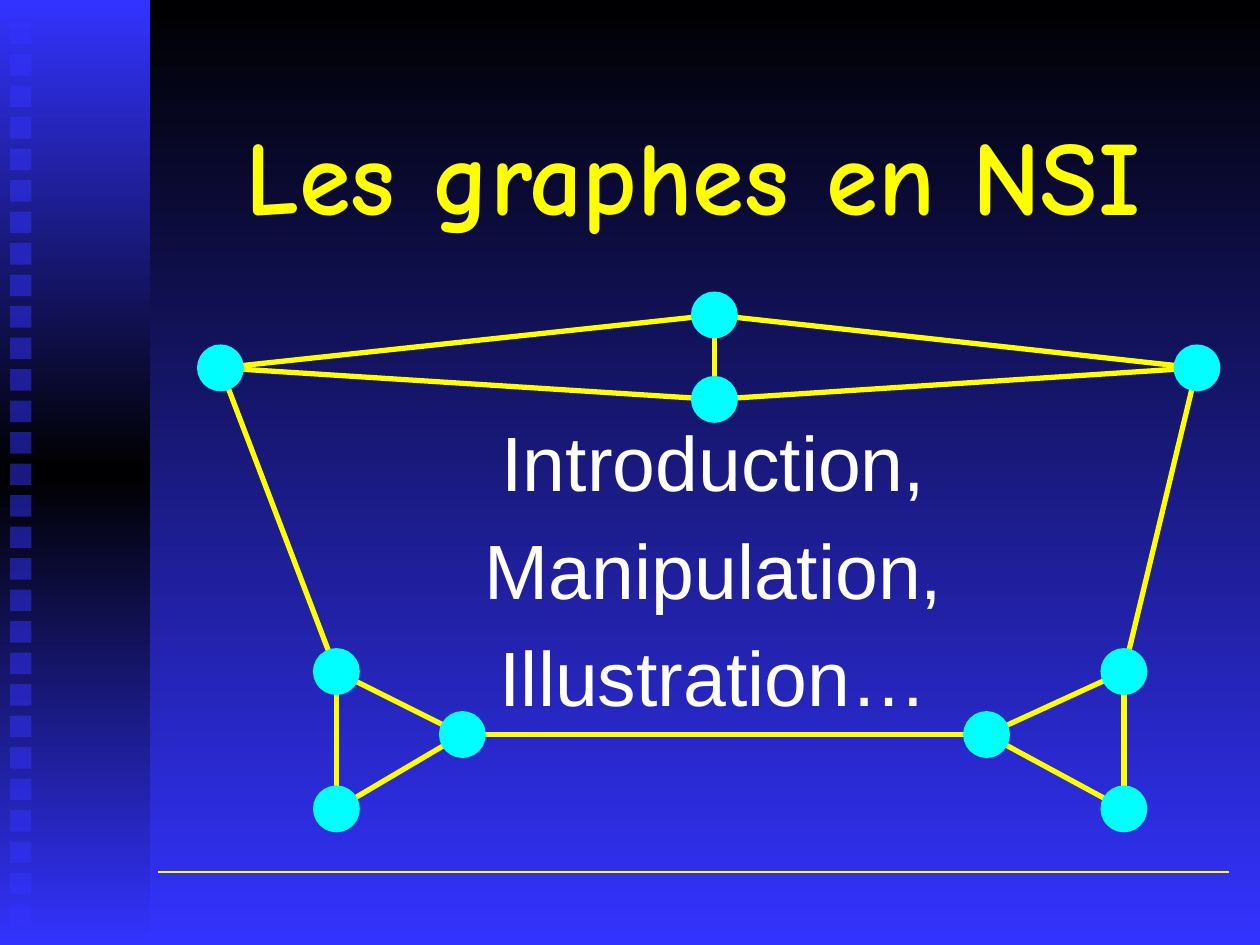
from copy import deepcopy

from lxml import etree
from pptx import Presentation
from pptx.dml.color import RGBColor
from pptx.enum.shapes import MSO_CONNECTOR as CONN, MSO_SHAPE as SHAPE
from pptx.enum.text import MSO_ANCHOR as ANCHOR, PP_ALIGN as ALIGN
from pptx.oxml.ns import qn
from pptx.util import Inches, Pt

BLACK = RGBColor(0x00, 0x00, 0x00)
BLUE = RGBColor(0x33, 0x33, 0xFF)
YELLOW = RGBColor(0xFF, 0xFF, 0x00)
CYAN = RGBColor(0x00, 0xFF, 0xFF)
WHITE = RGBColor(0xFF, 0xFF, 0xFF)

# Content
TITLE = ["Les graphes en NSI"]
SUBTITLE = ["Introduction,", "Manipulation,", "Illustration…"]
TITLE_FONT = {"name": "Comic Neue", "size": Pt(60), "bold": True}
SUBTITLE_FONT = {"name": "Arial", "size": Pt(44), "bold": False}

# Graph: node centres in inches, and the pairs they join
NODES = {
    "top": (5.67, 2.5), "middle": (5.67, 3.17),
    "left": (1.75, 2.92), "right": (9.5, 2.92),
    "left upper": (2.67, 5.33), "left lower": (2.67, 6.42), "left inner": (3.67, 5.83),
    "right upper": (8.92, 5.33), "right lower": (8.92, 6.42), "right inner": (7.83, 5.83),
}
EDGES = [
    ("left inner", "right inner"),
    ("right inner", "right upper"), ("right upper", "right lower"), ("right lower", "right inner"),
    ("left inner", "left upper"), ("left upper", "left lower"), ("left lower", "left inner"),
    ("left upper", "left"), ("right upper", "right"),
    ("top", "middle"), ("middle", "right"), ("right", "top"), ("top", "left"), ("left", "middle"),
]
NODE_SIZE = 0.33

# Side band
BAND_WIDTH = 1.19
SQUARE_COUNT, SQUARE_SIZE, SQUARE_PITCH = 29, 0.17, 0.25
SQUARE_LEFT, SQUARE_TOP = 0.08, 0.18


def set_gradient(fill, element, stops):
    """Vertical gradient from (position, colour) stops."""
    fill.gradient()
    fill.gradient_angle = 270
    gs_list = element.find(".//" + qn("a:gsLst"))
    while len(gs_list) < len(stops):
        gs_list.append(deepcopy(gs_list[0]))
    for stop, (position, color) in zip(fill.gradient_stops, stops):
        stop.position, stop.color.rgb = position, color


def add_shape(shapes, kind, x, y, w, h):
    sp = shapes.add_shape(kind, Inches(x), Inches(y), Inches(w), Inches(h))
    sp.shadow.inherit = False
    sp.line.fill.background()
    return sp


def add_line(shapes, start, end, width):
    line = shapes.add_connector(CONN.STRAIGHT, *map(Inches, start + end))
    line.line.color.rgb = YELLOW
    line.line.width = Pt(width)
    etree.SubElement(line._element.spPr, qn("a:effectLst"))


def add_text(s, box, lines, font, color, anchor, space_percent=0):
    tf = s.shapes.add_textbox(*map(Inches, box)).text_frame
    tf.word_wrap = True
    tf.vertical_anchor = anchor
    for i, text in enumerate(lines):
        p = tf.paragraphs[0] if i == 0 else tf.add_paragraph()
        p.alignment = ALIGN.CENTER
        if space_percent:
            before = etree.SubElement(p._p.get_or_add_pPr(), qn("a:spcBef"))
            etree.SubElement(before, qn("a:spcPct"), val=str(space_percent * 1000))
        r = p.add_run()
        r.text = text
        r.font.color.rgb = color
        for name, value in font.items():
            setattr(r.font, name, value)


def add_band(s):
    shapes = s.shapes.add_group_shape().shapes
    band = add_shape(shapes, SHAPE.RECTANGLE, 0, 0, BAND_WIDTH, 7.5)
    set_gradient(band.fill, band._element, [(0, BLUE), (0.5, BLACK), (1, BLUE)])
    for i in range(SQUARE_COUNT):
        sq = add_shape(shapes, SHAPE.RECTANGLE, SQUARE_LEFT, SQUARE_TOP + i * SQUARE_PITCH,
                       SQUARE_SIZE, SQUARE_SIZE)
        sq.fill.solid()
        sq.fill.fore_color.rgb = BLUE
        # Half transparent
        etree.SubElement(sq._element.spPr.find(".//" + qn("a:srgbClr")), qn("a:alpha"), val="50000")


def add_graph(s):
    shapes = s.shapes.add_group_shape().shapes
    for a, b in EDGES:
        add_line(shapes, NODES[a], NODES[b], 3)
    for x, y in NODES.values():
        node = add_shape(shapes, SHAPE.OVAL, x - NODE_SIZE / 2, y - NODE_SIZE / 2,
                         NODE_SIZE, NODE_SIZE)
        node.fill.solid()
        node.fill.fore_color.rgb = CYAN
        node.line.color.rgb = CYAN
        node.line.width = Pt(3)


def main():
    prs = Presentation()
    prs.slide_width, prs.slide_height = Inches(10), Inches(7.5)
    s = prs.slides.add_slide(prs.slide_layouts[6])
    set_gradient(s.background.fill, s.element, [(0, BLACK), (1, BLUE)])

    add_band(s)
    add_line(s.shapes, (1.25, 6.92), (9.75, 6.92), 1)
    add_text(s, (1.25, 0.75, 8.5, 1.25), TITLE, TITLE_FONT, YELLOW, ANCHOR.MIDDLE)
    add_text(s, (1.75, 3.24, 7.83, 2.75), SUBTITLE, SUBTITLE_FONT, WHITE, ANCHOR.TOP, 20)
    add_graph(s)
    prs.save("out.pptx")


if __name__ == "__main__":
    main()
